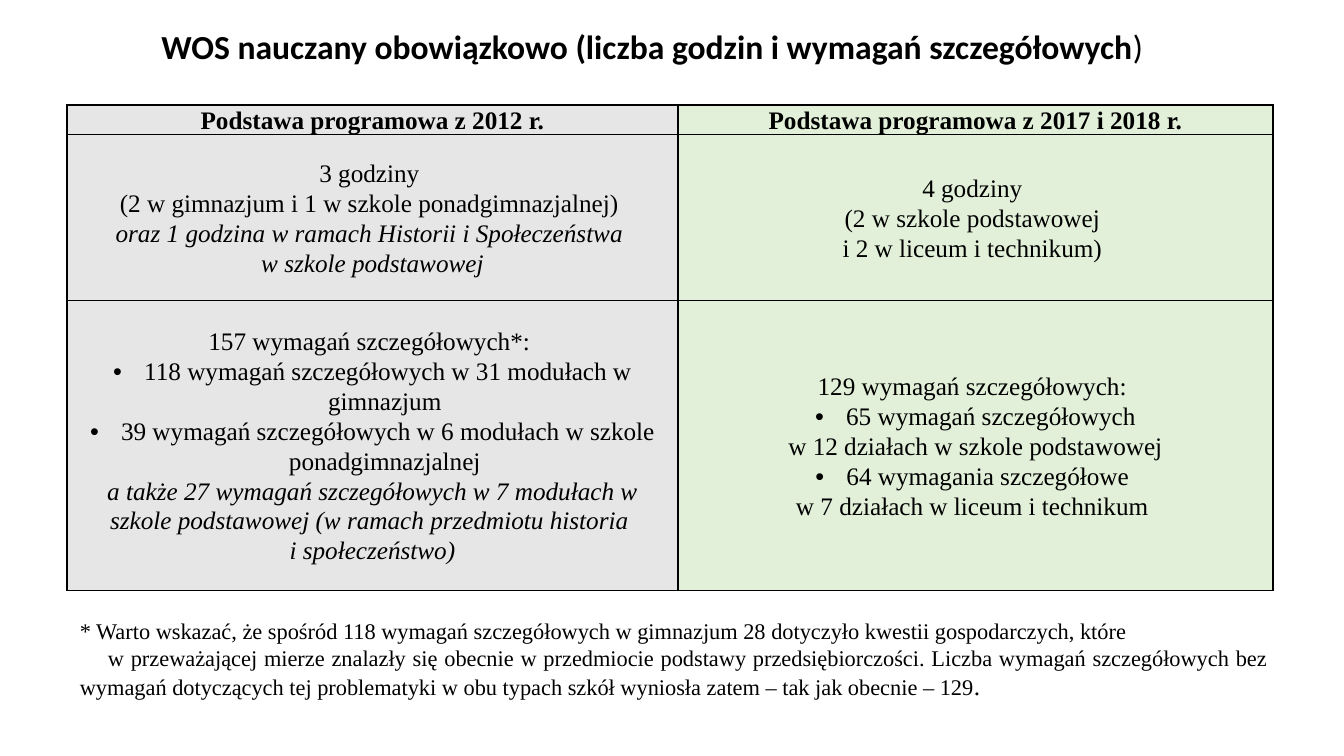
from lxml import etree
from pptx import Presentation, util as u
from pptx.dml.color import RGBColor
from pptx.enum import text
from pptx.oxml.ns import qn

PX = 914400 / 100.8
COLORS = {"ink": "000000", "old": "E7E6E6", "new": "E2F0D9"}
SERIF = "Times New Roman"
CENTER = text.PP_ALIGN.CENTER
PLAIN, ITALIC, BULLET = "plain", "italic", "bullet"

HEADINGS = ["Podstawa programowa z 2012 r.", "Podstawa programowa z 2017 i 2018 r."]
HOURS = [
    [(PLAIN, "3 godziny "),
     (PLAIN, "(2 w gimnazjum i 1 w szkole ponadgimnazjalnej) "),
     (ITALIC, "oraz 1 godzina w ramach Historii i Społeczeństwa \nw szkole podstawowej")],
    [(PLAIN, "4 godziny "),
     (PLAIN, "(2 w szkole podstawowej "),
     (PLAIN, "i 2 w liceum i technikum) ")],
]
REQUIREMENTS = [
    [(PLAIN, "157 wymagań szczegółowych*: "),
     (BULLET, "118 wymagań szczegółowych w 31 modułach w gimnazjum "),
     (BULLET, "39 wymagań szczegółowych w 6 modułach w szkole ponadgimnazjalnej "),
     (ITALIC, "a także 27 wymagań szczegółowych w 7 modułach w szkole podstawowej "
              "(w ramach przedmiotu historia \ni społeczeństwo)")],
    [(PLAIN, "129 wymagań szczegółowych: "),
     (BULLET, "65 wymagań szczegółowych"),
     (PLAIN, "w 12 działach w szkole podstawowej"),
     (BULLET, "64 wymagania szczegółowe "),
     (PLAIN, "w 7 działach w liceum i technikum ")],
]
NOTE_START = ("* Warto wskazać, że spośród 118 wymagań szczegółowych w gimnazjum 28 "
              "dotyczyło kwestii gospodarczych, które")
NOTE_REST = ("w przeważającej mierze znalazły się obecnie w przedmiocie podstawy "
             "przedsiębiorczości. Liczba wymagań szczegółowych bez wymagań dotyczących "
             "tej problematyki w obu typach szkół wyniosła zatem – tak jak obecnie – 129")


def px(count):
    return u.Emu(round(count * PX))


def color(name):
    return RGBColor.from_string(COLORS[name])


def add_run(paragraph, words, size, font=SERIF, bold=False, italic=False):
    run = paragraph.add_run()
    run.text = words
    run.font.size = u.Pt(size)
    run.font.name = font
    run.font.bold = bold
    run.font.italic = italic
    run.font.color.rgb = color("ink")


def next_paragraph(frame, index):
    return frame.paragraphs[0] if index == 0 else frame.add_paragraph()


def add_bullet(paragraph):
    props = paragraph._p.get_or_add_pPr()
    props.set("marL", str(px(31)))
    props.set("indent", str(-px(31)))
    etree.SubElement(props, qn("a:buFont"), typeface="Arial")
    etree.SubElement(props, qn("a:buChar"), char="•")


def add_borders(cell):
    props = cell._tc.get_or_add_tcPr()
    for place, side in enumerate(("lnL", "lnR", "lnT", "lnB")):
        line = etree.Element(qn("a:" + side), w=str(u.Pt(1)))
        fill = etree.SubElement(line, qn("a:solidFill"))
        etree.SubElement(fill, qn("a:srgbClr"), val=COLORS["ink"])
        props.insert(place, line)


def fill_cell(cell, lines, shade, bold, anchor):
    cell.margin_left = cell.margin_right = px(7)
    cell.margin_top = cell.margin_bottom = 0
    cell.vertical_anchor = anchor
    cell.fill.solid()
    cell.fill.fore_color.rgb = color(shade)
    add_borders(cell)
    for index, (style, words) in enumerate(lines):
        paragraph = next_paragraph(cell.text_frame, index)
        paragraph.alignment = CENTER
        paragraph.line_spacing = 1.07
        if style == BULLET:
            add_bullet(paragraph)
        for part, piece in enumerate(words.split("\n")):
            if part:
                paragraph.add_line_break()
            add_run(paragraph, piece, 18, bold=bold, italic=style == ITALIC)


def add_title(slide):
    title = slide.shapes.title
    title.left, title.top, title.width, title.height = px(86), px(0), px(1140), px(97)
    frame = title.text_frame
    frame.vertical_anchor = text.MSO_ANCHOR.MIDDLE
    frame.word_wrap = True
    heading = frame.paragraphs[0]
    heading.alignment = CENTER
    heading.line_spacing = 0.9
    add_run(heading, "WOS nauczany obowiązkowo (liczba godzin i wymagań szczegółowych",
            24, "Calibri", bold=True)
    add_run(heading, ") ", 24, "Calibri")


def add_comparison(slide):
    widths, heights = [611, 595], [21, 166, 290]
    table = slide.shapes.add_table(3, 2, px(67), px(105), px(sum(widths)),
                                   px(sum(heights))).table
    for column, width in zip(table.columns, widths):
        column.width = px(width)
    for row, height in zip(table.rows, heights):
        row.height = px(height)
    headings = [[(PLAIN, heading)] for heading in HEADINGS]
    for r, contents in enumerate([headings, HOURS, REQUIREMENTS]):
        anchor = text.MSO_ANCHOR.MIDDLE if r else text.MSO_ANCHOR.TOP
        for c, shade in enumerate(["old", "new"]):
            fill_cell(table.cell(r, c), contents[c], shade, r == 0, anchor)


def add_footnote(slide):
    frame = slide.shapes.add_textbox(px(70), px(612), px(1208), px(126)).text_frame
    frame.word_wrap = True
    start = next_paragraph(frame, 0)
    add_run(start, NOTE_START, 16)
    rest = next_paragraph(frame, 1)
    rest.alignment = text.PP_ALIGN.JUSTIFY
    rest._p.get_or_add_pPr().set("indent", str(px(28)))
    add_run(rest, NOTE_REST, 16)
    add_run(rest, ". ", 18)


def main():
    deck = Presentation()
    deck.slide_width, deck.slide_height = px(1344), px(756)
    slide = deck.slides.add_slide(deck.slide_layouts[5])
    add_comparison(slide)
    add_footnote(slide)
    add_title(slide)
    deck.save("out.pptx")


if __name__ == "__main__":
    main()
